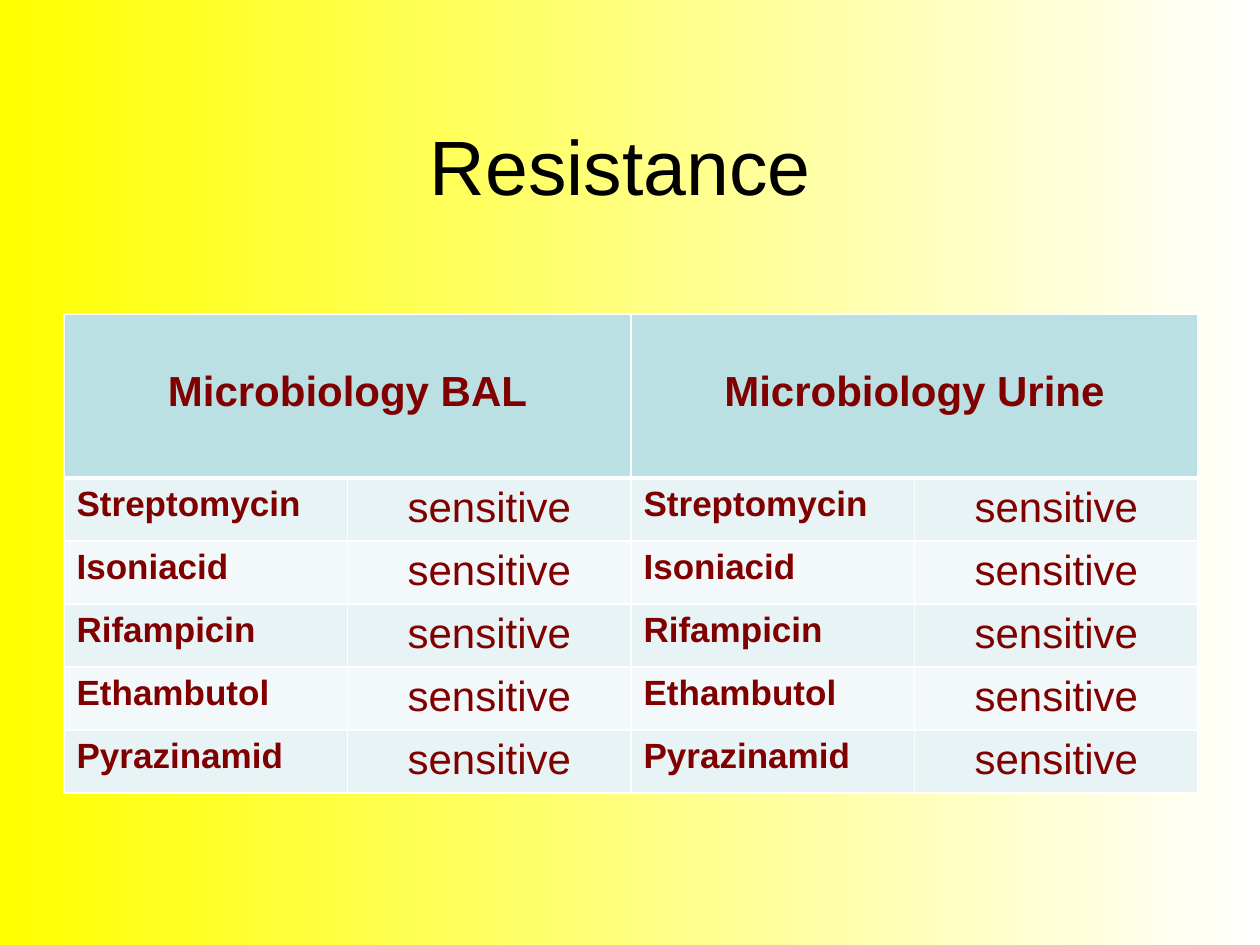
from lxml import etree
from pptx import Presentation
from pptx.dml.color import RGBColor
from pptx.enum.text import MSO_ANCHOR, PP_ALIGN
from pptx.oxml.ns import qn
from pptx.util import Pt

EMU_PER_PX = 914400 / 126
CENTER, LEFT = PP_ALIGN.CENTER, PP_ALIGN.LEFT
MIDDLE, TOP = MSO_ANCHOR.MIDDLE, MSO_ANCHOR.TOP
TITLE_ONLY = 5

BLACK = RGBColor(0x00, 0x00, 0x00)
WHITE = RGBColor(0xFF, 0xFF, 0xFF)
YELLOW = RGBColor(0xFF, 0xFF, 0x00)
MAROON = RGBColor(0x80, 0x00, 0x00)
HEADER_TEAL = RGBColor(0xBB, 0xE0, 0xE3)
BANDS = (RGBColor(0xE7, 0xF3, 0xF4), RGBColor(0xF3, 0xF9, 0xFA))

FORMATS = {
    "title": {"size": Pt(44), "bold": False},
    "header": {"size": Pt(24), "bold": True},
    "drug": {"size": Pt(20), "bold": True},
    "result": {"size": Pt(24), "bold": False},
}
SAMPLES = ("Microbiology BAL", "Microbiology Urine")
DRUGS = ("Streptomycin", "Isoniacid", "Rifampicin", "Ethambutol", "Pyrazinamid")
RESULT = "sensitive"


def px(length):
    return round(length * EMU_PER_PX)


class ResistanceSlide:
    font_name = "Arial"

    def __init__(self, deck):
        self.slide = deck.slides.add_slide(deck.slide_layouts[TITLE_ONLY])

    def background(self, start, end):
        fill = self.slide.background.fill
        fill.gradient()
        fill.gradient_angle = 0
        for stop, color, position in zip(fill.gradient_stops, (start, end), (0, 1)):
            stop.color.rgb = color
            stop.position = position

    def set_text(self, frame, text, role, color, align):
        frame.text = text
        paragraph = frame.paragraphs[0]
        paragraph.alignment = align
        font = paragraph.runs[0].font
        for name, value in {"name": self.font_name, **FORMATS[role]}.items():
            setattr(font, name, value)
        font.color.rgb = color

    def title(self, text, left, top, width, height):
        heading = self.slide.shapes.title
        bounds = {"left": left, "top": top, "width": width, "height": height}
        for name, value in bounds.items():
            setattr(heading, name, px(value))
        heading.text_frame.vertical_anchor = MIDDLE
        self.set_text(heading.text_frame, text, "title", BLACK, CENTER)

    def table(self, rows, columns, left, top, width, header_height, row_height):
        height = header_height + (rows - 1) * row_height
        frame = self.slide.shapes.add_table(
            rows, columns, px(left), px(top), px(width), px(height))
        grid = frame.table
        for index, row in enumerate(grid.rows):
            row.height = px(row_height if index else header_height)
        return grid

    def style_cell(self, cell, color, top_width=1, bottom_width=1):
        cell.fill.solid()
        cell.fill.fore_color.rgb = color
        cell.vertical_anchor = TOP
        properties = cell._tc.get_or_add_tcPr()
        widths = {"lnL": 1, "lnR": 1, "lnT": top_width, "lnB": bottom_width}
        for index, (side, width) in enumerate(widths.items()):
            border = etree.Element(qn(f"a:{side}"), w=str(Pt(width)))
            solid = etree.SubElement(border, qn("a:solidFill"))
            etree.SubElement(solid, qn("a:srgbClr"), val=str(WHITE))
            properties.insert(index, border)

    def resistance_table(self):
        grid = self.table(len(DRUGS) + 1, 2 * len(SAMPLES), 64, 314, 1134, 164, 63)
        for cell in grid.rows[0].cells:
            self.style_cell(cell, HEADER_TEAL, bottom_width=3)
        for index, sample in enumerate(SAMPLES):
            header = grid.cell(0, 2 * index)
            header.merge(grid.cell(0, 2 * index + 1))
            header.margin_top = px(55)
            self.set_text(header.text_frame, sample, "header", MAROON, CENTER)
        for row, drug in enumerate(DRUGS, start=1):
            for column, cell in enumerate(grid.rows[row].cells):
                self.style_cell(cell, BANDS[(row - 1) % 2], top_width=3 if row == 1 else 1)
                if column % 2:
                    self.set_text(cell.text_frame, RESULT, "result", MAROON, CENTER)
                else:
                    self.set_text(cell.text_frame, drug, "drug", MAROON, LEFT)


def main():
    deck = Presentation()
    deck.slide_width, deck.slide_height = px(1260), px(945)
    page = ResistanceSlide(deck)
    page.background(YELLOW, WHITE)
    page.title("Resistance ", 64, 86, 1134, 158)
    page.resistance_table()
    deck.save("out.pptx")


if __name__ == "__main__":
    main()
